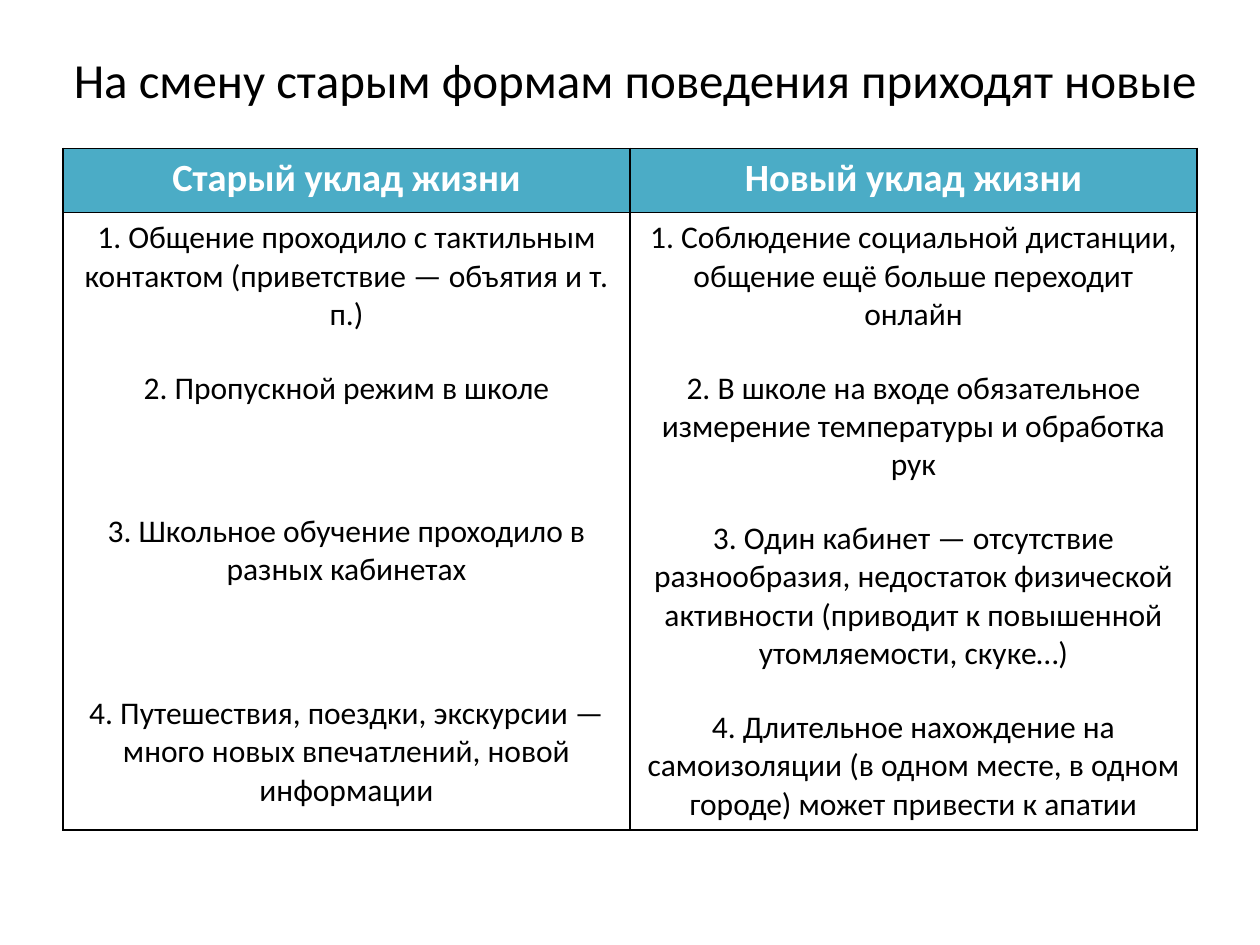
import dataclasses

import lxml.etree
import pptx
import pptx.dml.color
import pptx.enum.text
import pptx.oxml.ns
import pptx.util


@dataclasses.dataclass(frozen=True)
class Theme:
    """Colours, type sizes and line widths of the slide."""

    font: str = "Calibri"
    text: str = "000000"
    header_text: str = "FFFFFF"
    header_fill: str = "4BACC6"
    body_fill: str = "FFFFFF"
    border: str = "000000"
    title_size: int = 28
    header_size: int = 22
    body_size: int = 18
    gap: int = 20
    border_width: float = 0.96


THEME = Theme()
SLIDE_WIDTH = pptx.util.Inches(10)
SLIDE_HEIGHT = pptx.util.Inches(7.5)
TITLE_BOX = (0.024, 0.011, 0.96, 0.146)
TABLE_BOX = (0.05, 0.157, 0.9, 0.721)
HEADER_SHARE = 0.094

TITLE = "На смену старым формам поведения приходят новые"
COLUMNS = [
    (
        "Старый уклад жизни",
        [
            ("1. Общение проходило с тактильным контактом (приветствие — объятия и т. п.)", 0),
            ("2. Пропускной режим в школе", 1),
            ("3. Школьное обучение проходило в разных кабинетах", 3),
            ("4. Путешествия, поездки, экскурсии — много новых впечатлений, новой информации", 3),
        ],
    ),
    (
        "Новый уклад жизни",
        [
            ("1. Соблюдение социальной дистанции, общение ещё больше переходит онлайн", 0),
            ("2. В школе на входе обязательное измерение температуры и обработка рук", 1),
            (
                "3. Один кабинет — отсутствие разнообразия, недостаток физической активности "
                "(приводит к повышенной утомляемости, скуке…)",
                1,
            ),
            (
                "4. Длительное нахождение на самоизоляции (в одном месте, в одном городе) "
                "может привести к апатии",
                1,
            ),
        ],
    ),
]


def set_attributes(target, values):
    """Set each named attribute of the target."""
    for name, value in values.items():
        setattr(target, name, value)


def place(box):
    """Turn shares of the slide into left, top, width and height."""
    sides = (SLIDE_WIDTH, SLIDE_HEIGHT) * 2
    return [round(share * side) for share, side in zip(box, sides)]


def write_paragraphs(text_frame, items, size, color, bold=False):
    """Write centred paragraphs, each with its number of gaps above it."""
    for index, (text, gaps) in enumerate(items):
        paragraph = text_frame.paragraphs[0] if index == 0 else text_frame.add_paragraph()
        set_attributes(
            paragraph,
            {
                "alignment": pptx.enum.text.PP_ALIGN.CENTER,
                "space_before": pptx.util.Pt(gaps * THEME.gap),
            },
        )
        run = paragraph.add_run()
        run.text = text
        set_attributes(
            run.font, {"name": THEME.font, "size": pptx.util.Pt(size), "bold": bold}
        )
        run.font.color.rgb = pptx.dml.color.RGBColor.from_string(color)


def format_cell(cell, fill):
    """Fill a cell and draw a line on each of its sides."""
    cell.fill.solid()
    cell.fill.fore_color.rgb = pptx.dml.color.RGBColor.from_string(fill)
    properties = cell._tc.get_or_add_tcPr()
    for index, side in enumerate(("lnL", "lnR", "lnT", "lnB")):
        line = lxml.etree.Element(
            pptx.oxml.ns.qn(f"a:{side}"), w=str(pptx.util.Pt(THEME.border_width))
        )
        solid = lxml.etree.SubElement(line, pptx.oxml.ns.qn("a:solidFill"))
        lxml.etree.SubElement(solid, pptx.oxml.ns.qn("a:srgbClr"), val=THEME.border)
        properties.insert(index, line)


def add_title(slide, box):
    """Place the heading in the title placeholder."""
    title = slide.shapes.title
    set_attributes(title, dict(zip(("left", "top", "width", "height"), place(box))))
    set_attributes(
        title.text_frame,
        {
            "word_wrap": True,
            "auto_size": pptx.enum.text.MSO_AUTO_SIZE.NONE,
            "vertical_anchor": pptx.enum.text.MSO_ANCHOR.MIDDLE,
        },
    )
    write_paragraphs(title.text_frame, [(TITLE, 0)], THEME.title_size, THEME.text)


def add_comparison(slide, box):
    """Place the table with one column for each way of life."""
    left, top, width, height = place(box)
    table = slide.shapes.add_table(2, len(COLUMNS), left, top, width, height).table
    table.rows[0].height = round(height * HEADER_SHARE)
    table.rows[1].height = height - table.rows[0].height
    for index, (heading, items) in enumerate(COLUMNS):
        header, body = table.cell(0, index), table.cell(1, index)
        format_cell(header, THEME.header_fill)
        format_cell(body, THEME.body_fill)
        write_paragraphs(
            header.text_frame, [(heading, 0)], THEME.header_size, THEME.header_text, True
        )
        write_paragraphs(body.text_frame, items, THEME.body_size, THEME.text)


def main():
    """Build and save the presentation."""
    presentation = pptx.Presentation()
    set_attributes(
        presentation, {"slide_width": SLIDE_WIDTH, "slide_height": SLIDE_HEIGHT}
    )
    slide = presentation.slides.add_slide(presentation.slide_layouts.get_by_name("Title Only"))
    add_title(slide, TITLE_BOX)
    add_comparison(slide, TABLE_BOX)
    presentation.save("out.pptx")


if __name__ == "__main__":
    main()
